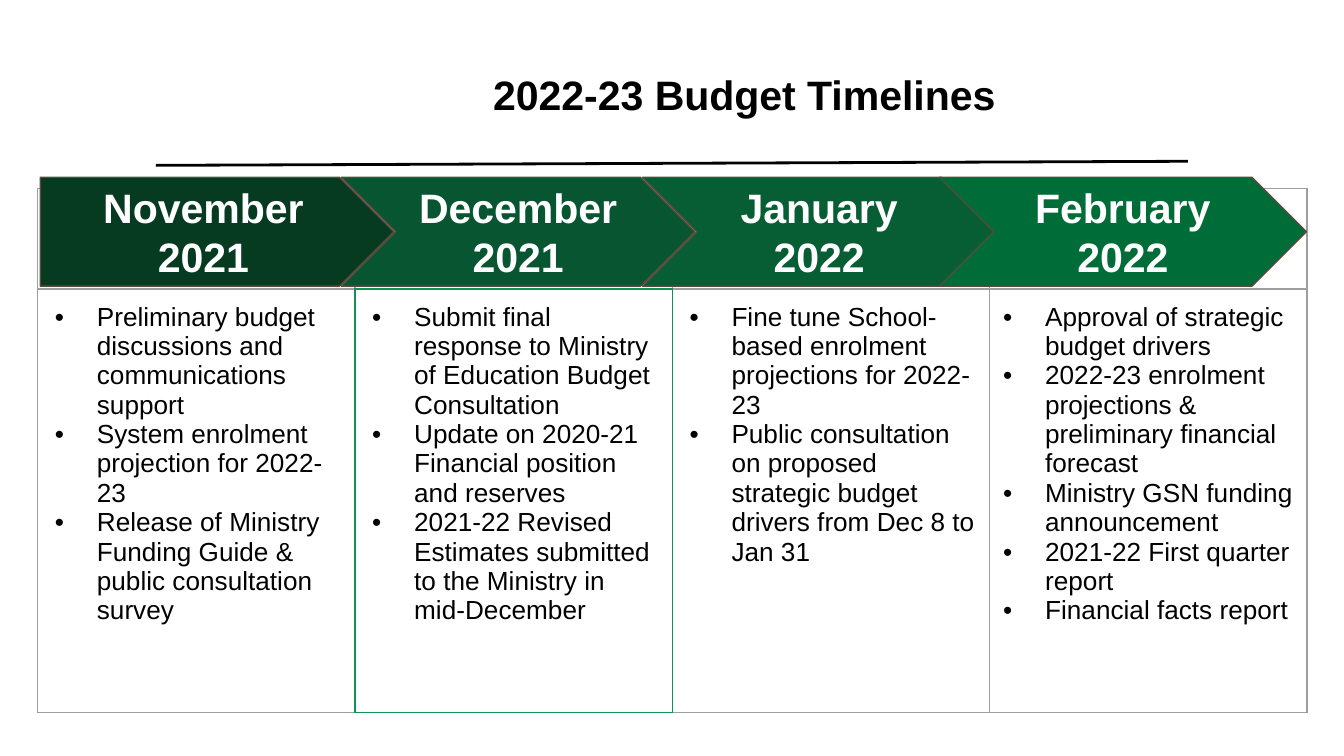
from lxml import etree
from pptx import Presentation
from pptx.dml.color import RGBColor
from pptx.enum.shapes import MSO_CONNECTOR, MSO_SHAPE
from pptx.enum.text import MSO_ANCHOR, PP_ALIGN
from pptx.oxml.ns import qn
from pptx.util import Pt

CENTER = PP_ALIGN.CENTER
MIDDLE = MSO_ANCHOR.MIDDLE
PENTAGON, CHEVRON = MSO_SHAPE.PENTAGON, MSO_SHAPE.CHEVRON
STRAIGHT = MSO_CONNECTOR.STRAIGHT

FONT = "Arial"
INSET = 7.2
COLORS = {
    "text": "000000", "light": "FFFFFF", "outline": "564B3C",
    "grid": "9E9E9E", "accent": "0E9453",
}
# label, fill, left, width
MONTHS = [
    ("November 2021", "063B22", 21.6, 189.4),
    ("December 2021", "085631", 182.9, 189.4),
    ("January 2022", "085E34", 344.2, 189.4),
    ("February 2022", "006D38", 503.3, 196.6),
]
# text indent, items
TASKS = [
    (24.5, ["Preliminary budget discussions and communications support",
            "System enrolment projection for 2022-23",
            "Release of Ministry Funding Guide & public consultation survey"]),
    (24.5, ["Submit final response to Ministry of Education Budget Consultation",
            "Update on 2020-21 Financial position and reserves",
            "2021-22 Revised Estimates submitted to the Ministry in mid-December"]),
    (24.5, ["Fine tune School-based enrolment projections for 2022-23",
            "Public consultation on proposed strategic budget drivers from Dec 8 to Jan 31"]),
    (22.5, ["Approval of strategic budget drivers",
            "2022-23 enrolment projections & preliminary financial forecast",
            "Ministry GSN funding announcement",
            "2021-22 First quarter report",
            "Financial facts report"]),
]
HANGING = 22.5
ACCENT_CELL = (1, 1)


def rgb(name):
    return RGBColor.from_string(COLORS[name])


def add_run(p, text, size, color, bold=False):
    r = p.add_run()
    r.text = text
    r.font.name, r.font.size, r.font.bold = FONT, Pt(size), bold
    r.font.color.rgb = rgb(color)


def set_heading(tf, text, color):
    tf.word_wrap = True
    tf.vertical_anchor = MIDDLE
    tf.margin_left = tf.margin_right = tf.margin_top = tf.margin_bottom = Pt(INSET)
    p = tf.paragraphs[0]
    p.alignment = CENTER
    add_run(p, text, 22, color, bold=True)


def add_title(s, left, top, width, height):
    box = s.shapes.add_textbox(Pt(left), Pt(top), Pt(width), Pt(height))
    set_heading(box.text_frame, "2022-23 Budget Timelines", "text")


def add_rule(s, x1, y1, x2, y2):
    line = s.shapes.add_connector(STRAIGHT, Pt(x1), Pt(y1), Pt(x2), Pt(y2))
    line.line.color.rgb = rgb("text")
    line.line.width = Pt(1.5)
    etree.SubElement(line._element.spPr, qn("a:effectLst"))


def set_bullet(p, indent):
    pPr = p._p.get_or_add_pPr()
    pPr.set("marL", str(Pt(indent)))
    pPr.set("indent", str(-Pt(HANGING)))
    color = etree.SubElement(pPr, qn("a:buClr"))
    etree.SubElement(color, qn("a:srgbClr"), val=COLORS["text"])
    etree.SubElement(pPr, qn("a:buFont"), typeface=FONT)
    etree.SubElement(pPr, qn("a:buChar"), char="•")


def set_borders(cell, row, col):
    """Draw the four borders, in the accent colour where they touch the accent cell."""
    neighbours = {"L": (row, col - 1), "R": (row, col + 1),
                  "T": (row - 1, col), "B": (row + 1, col)}
    tcPr = cell._tc.get_or_add_tcPr()
    for side, neighbour in neighbours.items():
        color = "accent" if ACCENT_CELL in ((row, col), neighbour) else "grid"
        ln = etree.SubElement(tcPr, qn(f"a:ln{side}"), w=str(Pt(0.75)))
        fill = etree.SubElement(ln, qn("a:solidFill"))
        etree.SubElement(fill, qn("a:srgbClr"), val=COLORS[color])


def add_task_table(s, left, top, width, row_heights):
    rows, cols = len(row_heights), len(TASKS)
    table = s.shapes.add_table(rows, cols, Pt(left), Pt(top), Pt(width),
                               Pt(sum(row_heights))).table
    table.first_row = table.horz_banding = False
    for column in table.columns:
        column.width = Pt(width / cols)
    for row, height in enumerate(row_heights):
        table.rows[row].height = Pt(height)
        for col in range(cols):
            cell = table.cell(row, col)
            set_borders(cell, row, col)
            cell.fill.background()
            cell.margin_left = cell.margin_right = Pt(INSET)
            cell.margin_top = cell.margin_bottom = Pt(INSET)
    for col, (indent, items) in enumerate(TASKS):
        tf = table.cell(1, col).text_frame
        for i, item in enumerate(items):
            p = tf.add_paragraph() if i else tf.paragraphs[0]
            set_bullet(p, indent)
            add_run(p, item, 14, "text")


def add_month_arrows(s, top, height):
    for i, (label, fill, left, width) in enumerate(MONTHS):
        sp = s.shapes.add_shape(CHEVRON if i else PENTAGON, Pt(left), Pt(top),
                                Pt(width), Pt(height))
        sp.shadow.inherit = False
        sp.adjustments[0] = 0.5
        sp.fill.solid()
        sp.fill.fore_color.rgb = RGBColor.from_string(fill)
        sp.line.color.rgb = rgb("outline")
        sp.line.width = Pt(0.75)
        set_heading(sp.text_frame, label, "light")


def main():
    prs = Presentation()
    prs.slide_width, prs.slide_height = Pt(720), Pt(405)
    s = prs.slides.add_slide(prs.slide_layouts[6])
    add_title(s, 116.6, 12.2, 564.5, 76.3)
    add_rule(s, 83.5, 88.6, 855.4 - 219, 86.4)
    add_task_table(s, 20.2, 100.8, 680, [54, 226.8])
    add_month_arrows(s, 95, 58.3)
    prs.save("out.pptx")


if __name__ == "__main__":
    main()
